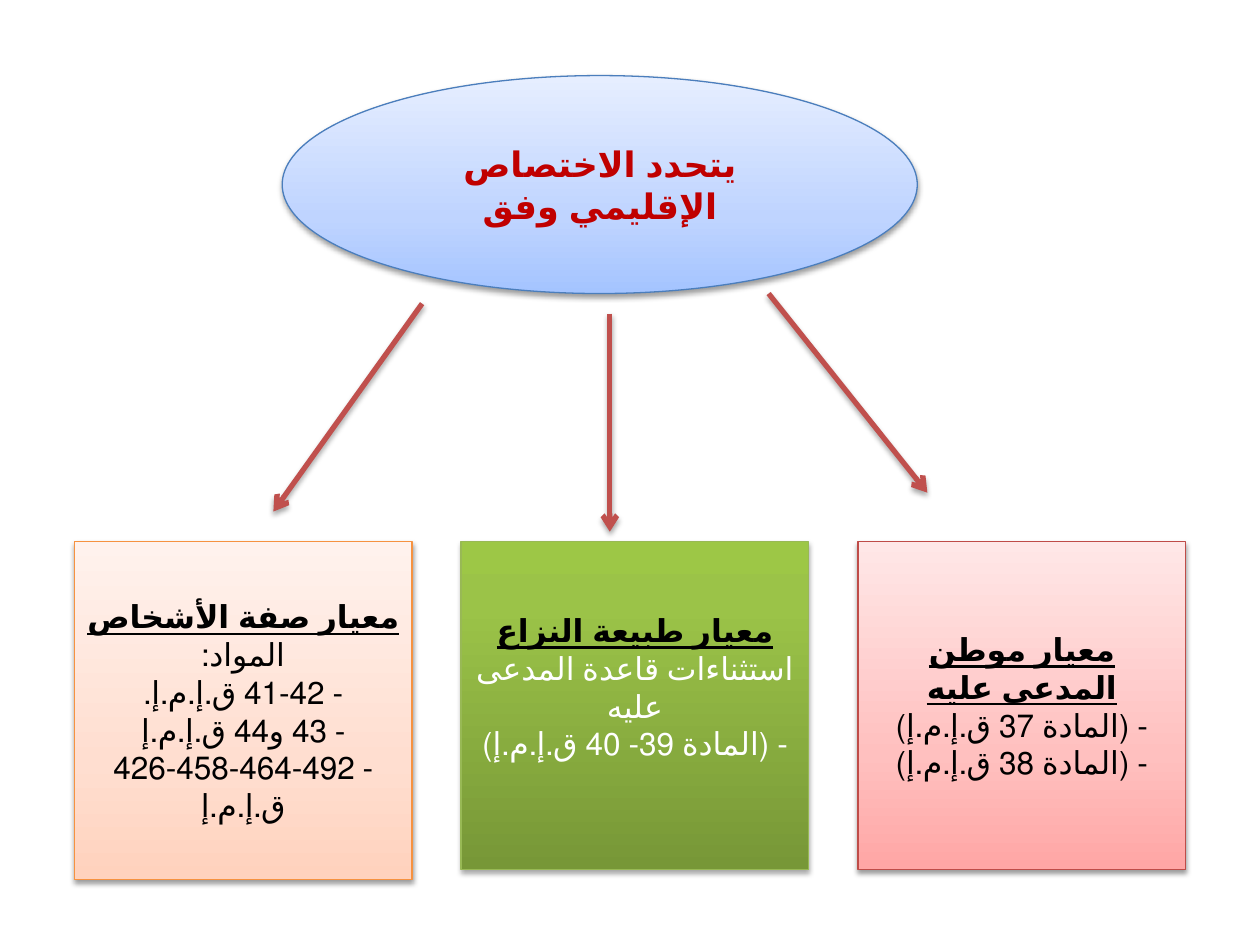
from dataclasses import dataclass

from pptx import Presentation
from pptx.dml.color import RGBColor
from pptx.enum import lang, shapes, text
from pptx.oxml import parse_xml
from pptx.oxml.ns import nsdecls, qn
from pptx.util import Inches, Pt


@dataclass(frozen=True)
class Palette:
    line: str
    stops: tuple  # (percent, colour), from the bottom edge upwards


@dataclass(frozen=True)
class Theme:
    font: str = "Calibri"
    title_size: int = 20
    body_size: int = 18
    title: str = "C00000"
    dark: str = "000000"
    light: str = "FFFFFF"
    arrow: str = "C0504D"
    blue: Palette = Palette("4B7EBC", ((0, "A4C4FF"), (35, "BFD4FF"), (100, "E6EEFF")))
    red: Palette = Palette("BF4C48", ((0, "FFA6A5"), (35, "FFC0BF"), (100, "FFE7E7")))
    green: Palette = Palette("98B955", ((0, "779737"), (80, "9BC348"), (100, "9DC746")))
    orange: Palette = Palette("F69240", ((0, "FFD2BD"), (35, "FFDED0"), (100, "FFF2ED")))


THEME = Theme()


def set_gradient(s, stops):
    """Fill a shape with a vertical gradient that may have over two stops."""
    s.fill.gradient()
    s.fill.gradient_angle = 90
    stop_list = s._element.spPr.find(qn("a:gradFill")).find(qn("a:gsLst"))
    for old in list(stop_list):
        stop_list.remove(old)
    for percent, color in stops:
        stop_list.append(parse_xml(
            f'<a:gs {nsdecls("a")} pos="{percent * 1000}"><a:srgbClr val="{color}"/></a:gs>'))


def add_shadow(s, distance, opacity):
    """Add a soft shadow below; the outline must already be set."""
    s._element.spPr.append(parse_xml(
        f'<a:effectLst {nsdecls("a")}><a:outerShdw blurRad="{Pt(3.1)}" dist="{Pt(distance)}" '
        f'dir="5400000" rotWithShape="0"><a:srgbClr val="000000">'
        f'<a:alpha val="{opacity * 1000}"/></a:srgbClr></a:outerShdw></a:effectLst>'))


def set_line(s, color, width):
    s.line.color.rgb = RGBColor.from_string(color)
    s.line.width = Pt(width)


def add_panel(slide, kind, box, palette, shadow=(1.6, 38)):
    s = slide.shapes.add_shape(kind, *(Inches(v) for v in box))
    set_gradient(s, palette.stops)
    set_line(s, palette.line, 0.75)
    add_shadow(s, *shadow)
    s.text_frame.word_wrap = True
    s.text_frame.vertical_anchor = text.MSO_ANCHOR.MIDDLE
    return s


def add_arrow(slide, start, end):
    s = slide.shapes.add_connector(
        shapes.MSO_CONNECTOR.STRAIGHT, *(Inches(v) for v in start + end))
    set_line(s, THEME.arrow, 3)
    s._element.spPr.find(qn("a:ln")).append(
        parse_xml(f'<a:tailEnd {nsdecls("a")} type="arrow"/>'))
    add_shadow(s, 1.8, 35)


def write_line(p, words, size, color, bold=False, underline=False):
    """Write one centred right-to-left paragraph."""
    p.alignment = text.PP_ALIGN.CENTER
    p._p.get_or_add_pPr().set("rtl", "1")
    r = p.add_run()
    r.text = words
    r.font.name = THEME.font
    r.font.size = Pt(size)
    r.font.bold = bold
    r.font.underline = underline
    r.font.color.rgb = RGBColor.from_string(color)
    r.font.language_id = lang.MSO_LANGUAGE_ID.ARABIC


def write_criterion(tf, heading, lines, color):
    write_line(tf.paragraphs[0], heading, THEME.body_size, THEME.dark, True, True)
    for line in lines:
        write_line(tf.add_paragraph(), line, THEME.body_size, color)


def main():
    prs = Presentation()
    prs.slide_width, prs.slide_height = Inches(10), Inches(7.5)
    slide = prs.slides.add_slide(prs.slide_layouts[6])
    rect = shapes.MSO_SHAPE.RECTANGLE

    topic = add_panel(slide, shapes.MSO_SHAPE.OVAL, (2.24, 0.6, 5.04, 1.73), THEME.blue)
    write_line(topic.text_frame.paragraphs[0], "يتحدد الاختصاص الإقليمي وفق",
               THEME.title_size, THEME.title, bold=True)

    for start, end in (((6.1, 2.33), (7.36, 3.91)),
                       ((4.84, 2.49), (4.84, 4.22)),
                       ((3.35, 2.41), (2.17, 4.06))):
        add_arrow(slide, start, end)

    domicile = add_panel(slide, rect, (6.81, 4.3, 2.6, 2.6), THEME.red)
    write_criterion(domicile.text_frame, "معيار موطن المدعى عليه",
                    ("- (المادة 37 ق.إ.م.إ)", "- (المادة 38 ق.إ.م.إ)"), THEME.dark)

    dispute = add_panel(slide, rect, (3.66, 4.3, 2.76, 2.6), THEME.green, (1.8, 35))
    dispute.text_frame.margin_bottom = Inches(0.35)
    write_criterion(dispute.text_frame, "معيار طبيعة النزاع",
                    ("استثناءات قاعدة المدعى عليه", "- (المادة 39- 40 ق.إ.م.إ)"), THEME.light)

    persons = add_panel(slide, rect, (0.59, 4.3, 2.68, 2.68), THEME.orange)
    write_criterion(persons.text_frame, "معيار صفة الأشخاص",
                    ("المواد:", "- 41-42 ق.إ.م.إ.", "- 43 و44 ق.إ.م.إ",
                     "- 426-458-464-492 ق.إ.م.إ"), THEME.dark)

    prs.save("out.pptx")


if __name__ == "__main__":
    main()
